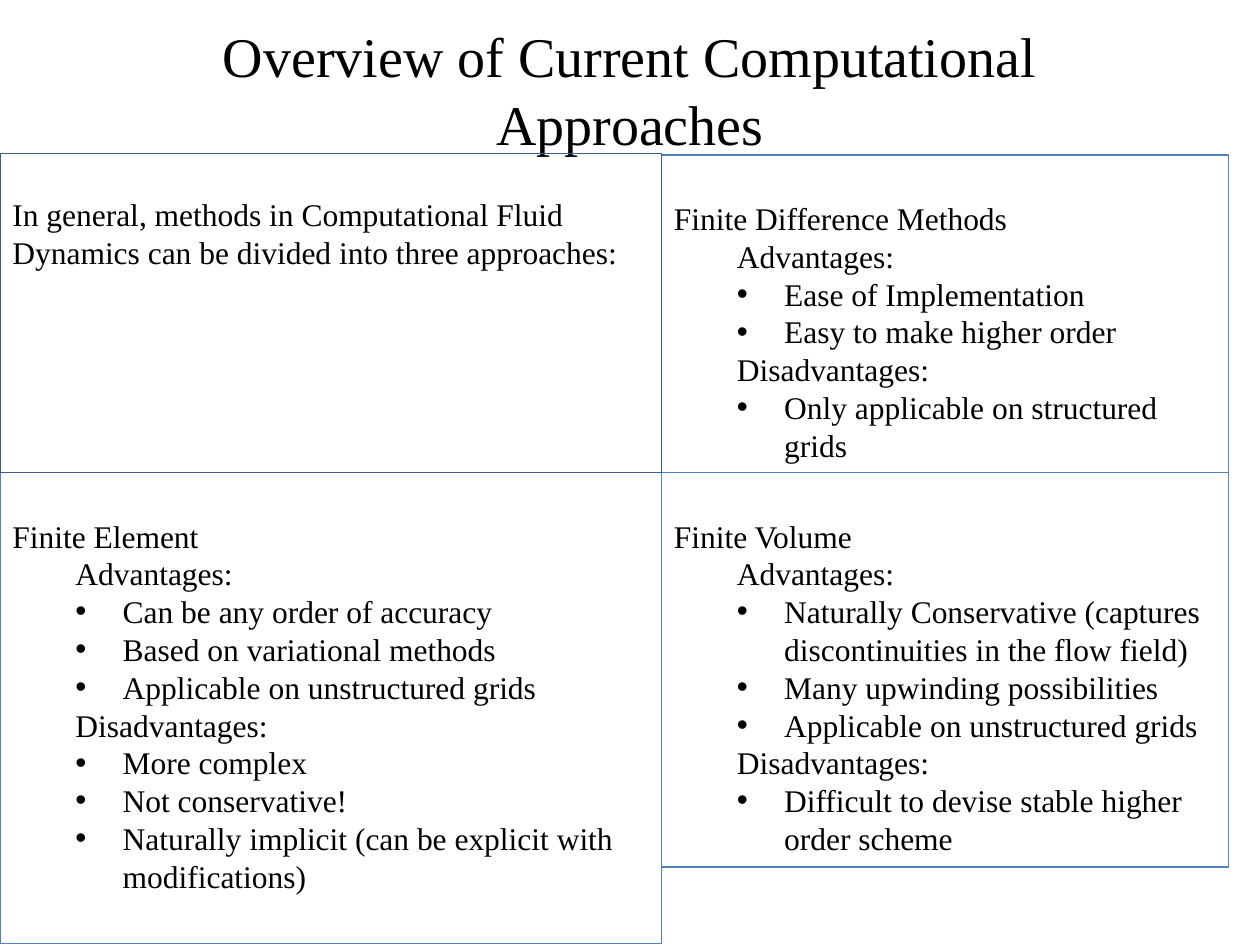
from lxml import etree
from pptx import Presentation
from pptx.dml.color import RGBColor
from pptx.enum.shapes import MSO_SHAPE
from pptx.enum.text import MSO_ANCHOR, PP_ALIGN
from pptx.oxml.ns import qn
from pptx.util import Pt

RECTANGLE = MSO_SHAPE.RECTANGLE
TOP, MIDDLE = MSO_ANCHOR.TOP, MSO_ANCHOR.MIDDLE
LEFT, CENTER = PP_ALIGN.LEFT, PP_ALIGN.CENTER

TITLE = "Overview of Current Computational Approaches"
INTRO = ("In general, methods in Computational Fluid Dynamics "
         "can be divided into three approaches:")
METHODS = {
    "Finite Difference Methods": {
        "Advantages:": ["Ease of Implementation", "Easy to make higher order"],
        "Disadvantages:": ["Only applicable on structured grids"],
    },
    "Finite Volume": {
        "Advantages:": [
            "Naturally Conservative (captures discontinuities in the flow field)",
            "Many upwinding possibilities",
            "Applicable on unstructured grids",
        ],
        "Disadvantages:": ["Difficult to devise stable higher order scheme"],
    },
    "Finite Element": {
        "Advantages:": [
            "Can be any order of accuracy",
            "Based on variational methods",
            "Applicable on unstructured grids",
        ],
        "Disadvantages:": [
            "More complex",
            "Not conservative!",
            "Naturally implicit (can be explicit with modifications)",
        ],
    },
}

# Two columns meet at SPLIT_X, two rows at SPLIT_Y
SPLIT_X, SPLIT_Y = 378, 270
RIGHT_WIDTH = 324
PANELS = {
    "Finite Difference Methods": (SPLIT_X, 88.5, RIGHT_WIDTH, SPLIT_Y - 88.5),
    "Finite Volume": (SPLIT_X, SPLIT_Y, RIGHT_WIDTH, 225.4),
    "Finite Element": (0, SPLIT_Y, SPLIT_X, 269.3),
}
INTRO_FRAME = (0, 87.8, SPLIT_X, SPLIT_Y - 87.8)
INTRO_TEXT = (0, 108, SPLIT_X, 51)
TITLE_FRAME = (54, 18, 612, 66)

FONT = "Times New Roman"
TITLE_SIZE, BODY_SIZE = 32, 18
BLACK, BLUE, DARK_BLUE = "000000", "4F81BD", "3A5F8C"
HANG, LEVEL_INDENT = 27, 36
PAD_X, PAD_Y, HEADING_DROP = 7.2, 3.6, 21.6


def color(hex_value):
    return RGBColor.from_string(hex_value)


def points(frame):
    return [Pt(value) for value in frame]


def format_text(box, anchor=TOP, top=PAD_Y):
    settings = {
        "word_wrap": True, "vertical_anchor": anchor,
        "margin_left": Pt(PAD_X), "margin_right": Pt(PAD_X),
        "margin_top": Pt(top), "margin_bottom": Pt(PAD_Y),
    }
    for name, value in settings.items():
        setattr(box.text_frame, name, value)


def write(para, text, size=BODY_SIZE, align=LEFT):
    para.alignment = align
    span = para.add_run()
    span.text = text
    for name, value in {"name": FONT, "size": Pt(size)}.items():
        setattr(span.font, name, value)
    span.font.color.rgb = color(BLACK)


def add_text(slide, frame, text, size=BODY_SIZE, align=LEFT, anchor=TOP):
    box = slide.shapes.add_textbox(*points(frame))
    format_text(box, anchor)
    write(box.text_frame.paragraphs[0], text, size, align)


def add_panel(slide, frame, line_color):
    panel = slide.shapes.add_shape(RECTANGLE, *points(frame))
    panel.shadow.inherit = False
    panel.fill.background()
    panel.line.color.rgb = color(line_color)
    panel.line.width = Pt(0.75)
    return panel


def indent(para, level, bullet):
    """Hang the first line and set or clear the bullet."""
    para.level = level
    properties = para._p.get_or_add_pPr()
    properties.set("marL", str(Pt(HANG + level * LEVEL_INDENT)))
    properties.set("indent", str(-Pt(HANG)))
    if bullet:
        etree.SubElement(properties, qn("a:buFont"), typeface="Arial")
        etree.SubElement(properties, qn("a:buChar"), char="•")
    else:
        etree.SubElement(properties, qn("a:buNone"))


def add_method(slide, name):
    panel = add_panel(slide, PANELS[name], BLUE)
    format_text(panel, top=PAD_Y + HEADING_DROP)
    lines = [(name, 0, False)]
    for heading, items in METHODS[name].items():
        lines.append((heading, 1, False))
        lines += [(item, 1, True) for item in items]
    frame = panel.text_frame
    for number, (text, level, bullet) in enumerate(lines):
        para = frame.add_paragraph() if number else frame.paragraphs[0]
        write(para, text)
        indent(para, level, bullet)


def main():
    deck = Presentation()
    deck.slide_width, deck.slide_height = Pt(720), Pt(540)
    slide = deck.slides.add_slide(deck.slide_layouts[6])
    add_text(slide, TITLE_FRAME, TITLE, TITLE_SIZE, CENTER, MIDDLE)
    for name in METHODS:
        add_method(slide, name)
    add_text(slide, INTRO_TEXT, INTRO)
    add_panel(slide, INTRO_FRAME, DARK_BLUE)
    deck.save("out.pptx")


if __name__ == "__main__":
    main()
